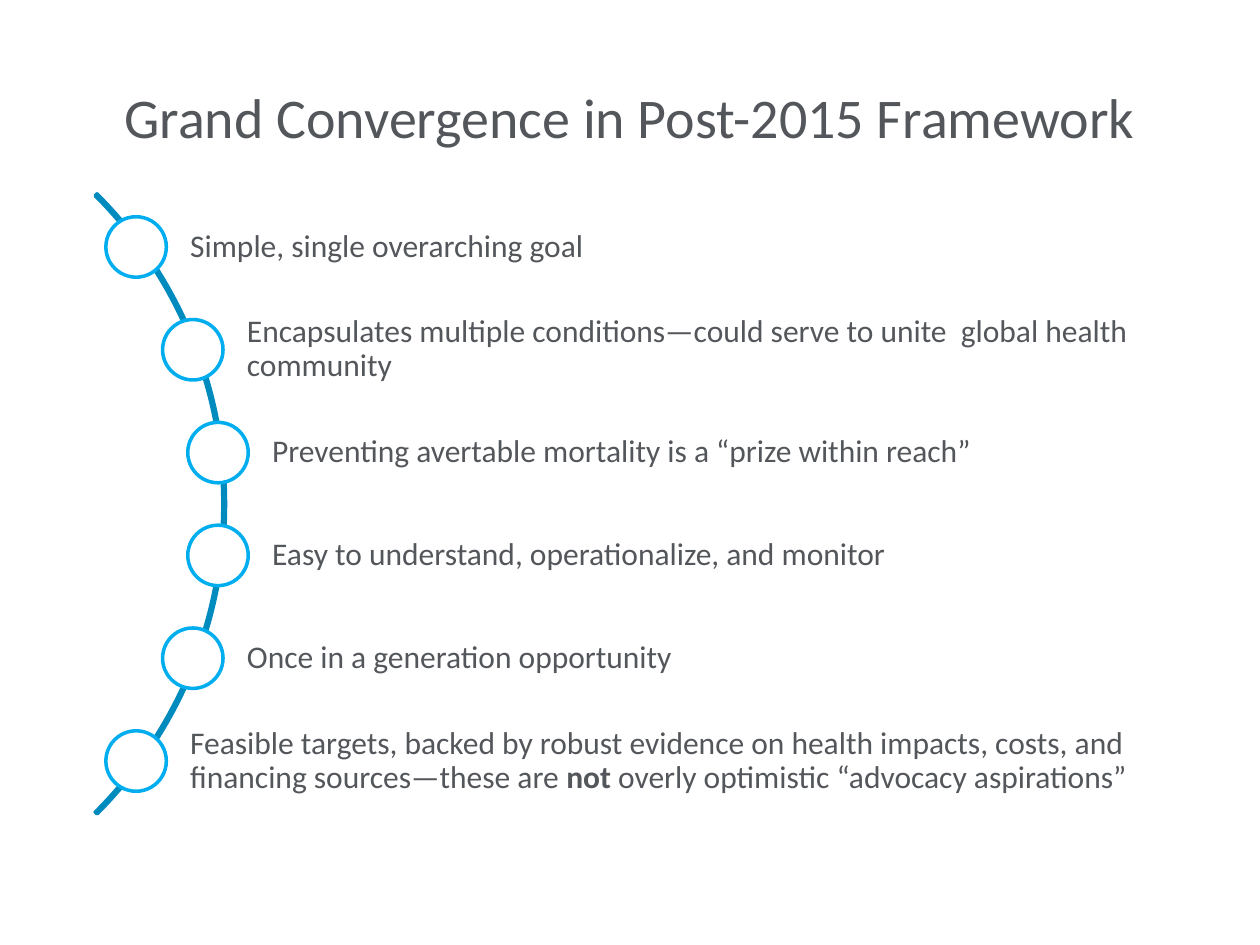
from pptx import Presentation
from pptx.dml.color import RGBColor
from pptx.enum import shapes, text
from pptx.util import Inches, Pt

FONT = "Calibri"
INK = "53565A"
ARC_BLUE = "008BBF"
RING_BLUE = "00AEEF"
WHITE = "FFFFFF"

RIGHT_EDGE = 9.68
FIRST_CENTER = 1.96
PITCH = 0.816
ROW_HEIGHT = 0.54
DOT_SIZE = 0.48

GOALS = [
    (1.08, ["Simple, single overarching goal"]),
    (1.53, ["Encapsulates multiple conditions—could serve to unite  global health community"]),
    (1.73, ["Preventing avertable mortality is a “prize within reach”"]),
    (1.73, ["Easy to understand, operationalize, and monitor"]),
    (1.53, ["Once in a generation opportunity"]),
    (1.08, ["Feasible targets, backed by robust evidence on health impacts, costs, and "
            "financing sources—these are ", "not", " overly optimistic “advocacy aspirations”"]),
]


def color(value):
    """Turn a hex string into a colour."""
    return RGBColor.from_string(value)


def add_text(page, left, top, width, height, parts, size, align, inset=0.1):
    """Add a middle-anchored text box whose every second part is bold."""
    box = page.shapes.add_textbox(Inches(left), Inches(top), Inches(width), Inches(height))
    frame = box.text_frame
    frame.word_wrap = True
    frame.vertical_anchor = text.MSO_ANCHOR.MIDDLE
    frame.margin_left = Inches(inset)
    frame.margin_right = Inches(0.05)
    para = frame.paragraphs[0]
    para.alignment = align
    para.font.name = FONT
    para.font.size = Pt(size)
    para.font.color.rgb = color(INK)
    for index, part in enumerate(parts):
        span = para.add_run()
        span.text = part
        if index % 2:
            span.font.bold = True
    return para


def add_outline(page, kind, left, top, size, line, fill=None):
    """Add a square preset shape with a 2-point outline."""
    shape = page.shapes.add_shape(kind, Inches(left), Inches(top), Inches(size), Inches(size))
    shape.shadow.inherit = False
    if fill:
        shape.fill.solid()
        shape.fill.fore_color.rgb = color(fill)
    else:
        shape.fill.background()
    shape.line.color.rgb = color(line)
    shape.line.width = Pt(2)
    return shape


def add_arc(page):
    """Add the thin arc that carries the goals."""
    arc = add_outline(page, shapes.MSO_SHAPE.BLOCK_ARC, -5.17, 0.52, 6.96, ARC_BLUE)
    for index, value in enumerate((189, 27, 0.003)):
        arc.adjustments[index] = value


def add_goal(page, left, center, parts):
    """Add a goal's text and the ring centred on its left edge."""
    para = add_text(page, left, center - ROW_HEIGHT / 2, RIGHT_EDGE - left, ROW_HEIGHT,
                    parts, 18, text.PP_ALIGN.LEFT, 0.43)
    para.line_spacing = 0.9
    add_outline(page, shapes.MSO_SHAPE.OVAL, left - DOT_SIZE / 2, center - DOT_SIZE / 2,
                DOT_SIZE, RING_BLUE, WHITE)


def main():
    """Build the slide and save it."""
    deck = Presentation()
    deck.slide_width, deck.slide_height = Inches(10), Inches(7.5)
    page = deck.slides.add_slide(deck.slide_layouts[6])
    add_text(page, 0.5, 0.3, 9, 1.25, ["Grand Convergence in Post-2015 Framework"],
             32, text.PP_ALIGN.CENTER, 0.05)
    add_arc(page)
    for row, (left, parts) in enumerate(GOALS):
        add_goal(page, left, FIRST_CENTER + row * PITCH, parts)
    deck.save("out.pptx")


if __name__ == "__main__":
    main()
